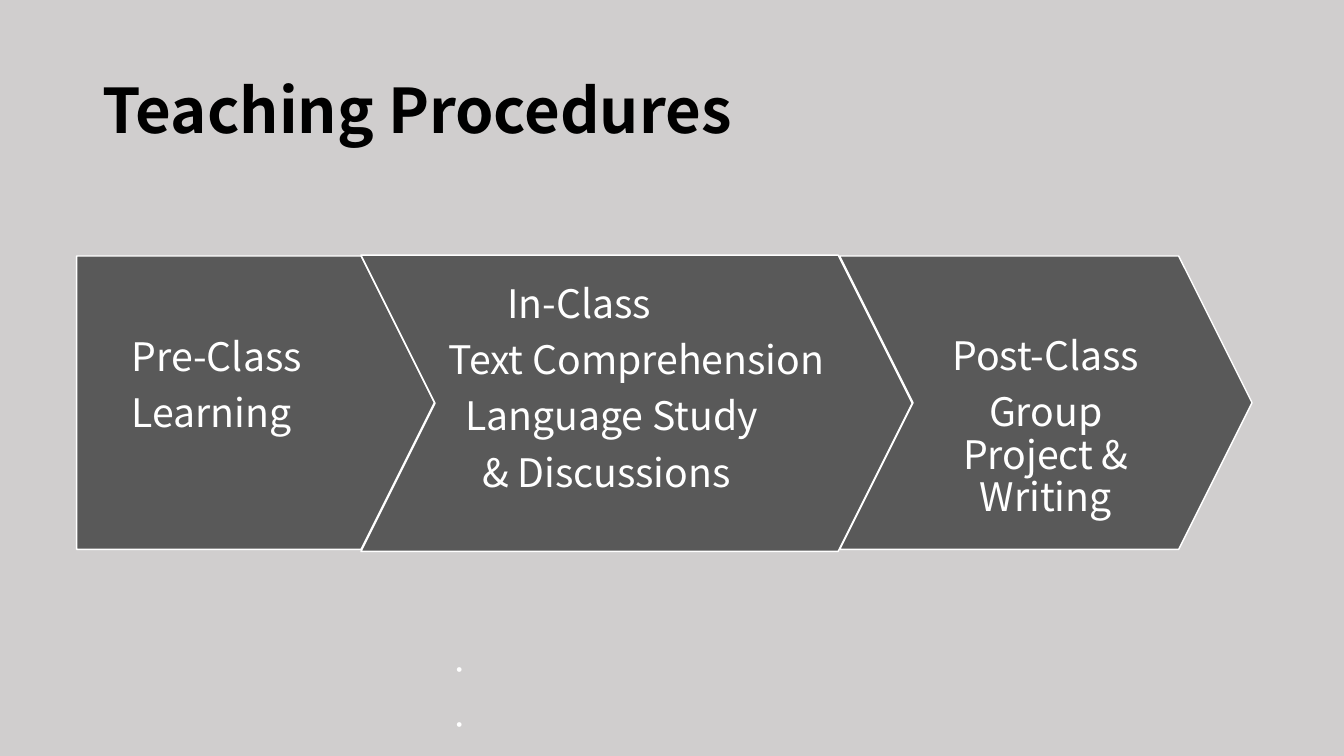
from pptx import Presentation
from pptx.dml.color import RGBColor
from pptx.enum.shapes import MSO_SHAPE as Shape
from pptx.enum.text import MSO_ANCHOR as Anchor, MSO_AUTO_SIZE as AutoSize, PP_ALIGN as Align
from pptx.util import Pt

FONT = "Noto Sans CJK SC"
WHITE, BLACK, GREY, BACKGROUND = "FFFFFF", "000000", "595959", "D0CECE"
STEP_INDENT = 6


def rgb(value):
    """Turn a hex string into a colour."""
    return RGBColor.from_string(value)


def add_run(paragraph, words, size, color, bold=False):
    """Append one formatted run to a paragraph."""
    run = paragraph.add_run()
    run.text = words
    run.font.name = FONT
    run.font.size = Pt(size)
    run.font.bold = bold
    run.font.color.rgb = rgb(color)


def add_title(slide, words):
    """Move and format the title placeholder."""
    title = slide.shapes.title
    title.left, title.top, title.width, title.height = Pt(66), Pt(28.75), Pt(828), Pt(104.4)
    frame = title.text_frame
    frame.auto_size = AutoSize.NONE
    frame.vertical_anchor = Anchor.MIDDLE
    heading = frame.paragraphs[0]
    heading.alignment = Align.LEFT
    heading.line_spacing = 0.9
    add_run(heading, words, 44, BLACK, bold=True)


def add_stage(slide, outline, left, top, width, height):
    """Draw one arrow-shaped stage of the process."""
    stage = slide.shapes.add_shape(outline, Pt(left), Pt(top), Pt(width), Pt(height))
    stage.adjustments[0] = 0.25
    stage.shadow.inherit = False
    stage.fill.solid()
    stage.fill.fore_color.rgb = rgb(GREY)
    stage.line.color.rgb = rgb(WHITE)
    stage.line.width = Pt(1)


def add_lines(slide, box, lines, size=28, pitch=30.4, gap=9.8, align=Align.LEFT):
    """Write white lines, each given as its words and its indent in steps."""
    frame = slide.shapes.add_textbox(*map(Pt, box)).text_frame
    frame.word_wrap = True
    frame.margin_left = frame.margin_right = Pt(9.4)
    frame.margin_top = frame.margin_bottom = Pt(0)
    for index, (words, steps) in enumerate(lines):
        line = frame.add_paragraph() if index else frame.paragraphs[0]
        line.alignment = align
        line.line_spacing = Pt(pitch)
        line.space_after = Pt(gap)
        if steps:
            properties = line._p.get_or_add_pPr()
            properties.set("marL", str(Pt(steps * STEP_INDENT)))
            properties.set("indent", "0")
        add_run(line, words, size, WHITE)


def main():
    """Build the slide and save it."""
    deck = Presentation()
    deck.slide_width, deck.slide_height = Pt(960), Pt(540)
    slide = deck.slides.add_slide(deck.slide_layouts[5])
    slide.background.fill.solid()
    slide.background.fill.fore_color.rgb = rgb(BACKGROUND)
    add_title(slide, "Teaching Procedures")

    add_stage(slide, Shape.PENTAGON, 54.7, 182.9, 255.6, 209.5)
    add_lines(slide, (54.7, 240.6, 229.7, 80), [("Pre-Class", 5), ("Learning", 5)])

    add_stage(slide, Shape.CHEVRON, 257.8, 182.2, 393.8, 211.7)
    in_class = [("In-Class", 7), ("Text Comprehension", 0),
                ("Language Study", 2), ("& Discussions", 4)]
    add_lines(slide, (311, 202.7, 288, 160), in_class)

    add_stage(slide, Shape.CHEVRON, 599.8, 182.9, 294.5, 209.5)
    post_class = [("Post-Class", 0), ("Group Project & Writing", 0)]
    add_lines(slide, (652.3, 239.7, 189.4, 140), post_class, align=Align.CENTER)

    add_lines(slide, (311, 467.6, 288, 60), [("•", 0), ("•", 0)], size=16, pitch=20, gap=19.3)
    deck.save("out.pptx")


if __name__ == "__main__":
    main()
